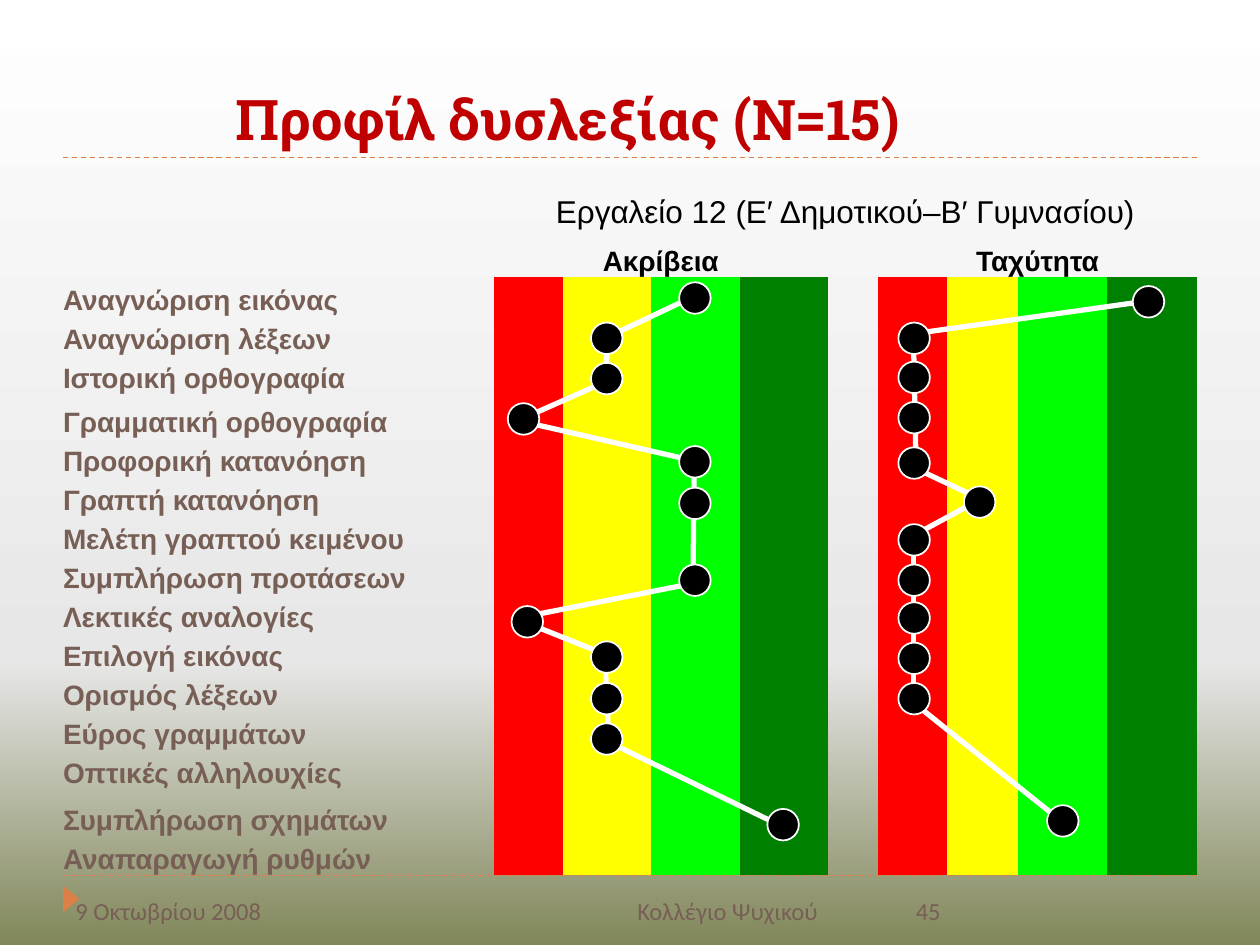
from copy import deepcopy
from dataclasses import dataclass

from lxml.etree import SubElement
from pptx import Presentation
from pptx.dml.color import RGBColor
from pptx.enum.dml import MSO_LINE
from pptx.enum.shapes import MSO_CONNECTOR, MSO_SHAPE
from pptx.enum.text import MSO_ANCHOR, PP_ALIGN
from pptx.oxml.ns import qn
from pptx.util import Inches, Pt


@dataclass(frozen=True)
class Theme:
    title: str = "C00000"
    label: str = "775F55"
    accent: str = "DD8047"
    black: str = "000000"
    white: str = "FFFFFF"
    bands: tuple = ("FF0000", "FFFF00", "00FF00", "008000")
    backdrop: tuple = ((0, "81875A"), (0.3, "E7E7E7"), (1, "FFFFFF"))
    title_size: int = 32
    tool_size: int = 18
    label_size: int = 16
    footer_size: int = 14
    title_font: str = "Roboto Slab"
    table_font: str = "Arial"
    footer_font: str = "Calibri"


@dataclass(frozen=True)
class Profile:
    heading: str
    first_column: int
    links: tuple  # (x1, y1, x2, y2)
    dots: tuple  # (left, top)


@dataclass(frozen=True)
class Caption:
    text: str
    box: tuple
    align: PP_ALIGN = PP_ALIGN.LEFT


THEME = Theme()
DOT = 0.25
COLUMNS = (3.42, 0.55, 0.7, 0.7, 0.7, 0.4, 0.55, 0.56, 0.71, 0.71)
HEADER_ROWS = (0.4, 0.31)
TESTS = (
    "Αναγνώριση εικόνας", "Αναγνώριση λέξεων", "Ιστορική ορθογραφία",
    "Γραμματική ορθογραφία", "Προφορική κατανόηση", "Γραπτή κατανόηση",
    "Μελέτη γραπτού κειμένου", "Συμπλήρωση προτάσεων", "Λεκτικές αναλογίες",
    "Επιλογή εικόνας", "Ορισμός λέξεων", "Εύρος γραμμάτων",
    "Οπτικές αλληλουχίες", "Συμπλήρωση σχημάτων", "Αναπαραγωγή ρυθμών",
)
TALL_ROWS = {"Γραμματική ορθογραφία": 0.35, "Συμπλήρωση σχημάτων": 0.37}
PROFILES = (
    Profile(
        "Ακρίβεια", 1,
        ((5.51, 3.67, 5.5, 4.6), (5.51, 2.35, 4.77, 2.7), (4.17, 4.94, 4.82, 5.2),
         (4.82, 2.68, 4.81, 2.98), (4.85, 3.01, 4.13, 3.33), (4.8, 5.2, 4.83, 5.84),
         (4.77, 5.86, 6.21, 6.56), (4.12, 3.34, 5.52, 3.66), (5.5, 4.63, 4.19, 4.89)),
        ((5.39, 2.24), (4.69, 2.56), (4.69, 2.88), (4.03, 3.2), (5.39, 3.54),
         (5.39, 3.87), (5.39, 4.48), (4.06, 4.81), (4.69, 5.09), (4.69, 5.42),
         (4.69, 5.74), (6.09, 6.42)),
    ),
    Profile(
        "Ταχύτητα", 6,
        ((9.1, 2.39, 7.24, 2.65), (7.28, 5.6, 8.44, 6.53), (7.25, 4.25, 7.25, 5.6),
         (7.25, 2.7, 7.27, 3.67), (7.23, 3.7, 7.8, 3.97), (7.73, 3.99, 7.27, 4.24)),
        ((8.99, 2.27), (7.13, 2.56), (7.13, 2.87), (7.13, 3.19), (7.13, 3.55),
         (7.65, 3.86), (7.13, 4.16), (7.13, 4.48), (7.13, 4.78), (7.13, 5.1),
         (7.13, 5.42), (8.31, 6.39)),
    ),
)
FOOTERS = (
    Caption("9 Οκτωβρίου 2008", (0.5, 7.06, 2.33, 0.29)),
    Caption("Κολλέγιο Ψυχικού", (3.42, 7.06, 3.17, 0.29), PP_ALIGN.RIGHT),
    Caption("45", (7.17, 7.06, 2.33, 0.29)),
)


def rgb(value: str) -> RGBColor:
    return RGBColor.from_string(value)


def write(paragraph, text: str, color: str, **formats) -> None:
    run = paragraph.add_run()
    run.text = text
    run.font.color.rgb = rgb(color)
    for name, value in formats.items():
        setattr(run.font, name, value)


def add_caption(slide, caption: Caption, color: str, anchor: MSO_ANCHOR, **formats) -> None:
    frame = slide.shapes.add_textbox(*map(Inches, caption.box)).text_frame
    frame.word_wrap = True
    frame.vertical_anchor = anchor
    frame.paragraphs[0].alignment = caption.align
    write(frame.paragraphs[0], caption.text, color, **formats)


def add_line(slide, ends: tuple, color: str, width: float, dash=None) -> None:
    line = slide.shapes.add_connector(MSO_CONNECTOR.STRAIGHT, *map(Inches, ends))
    line.line.color.rgb = rgb(color)
    line.line.width = Pt(width)
    if dash:
        line.line.dash_style = dash
    SubElement(line._element.spPr, qn("a:effectLst"))


def add_solid(slide, kind: MSO_SHAPE, box: tuple, fill: str):
    solid = slide.shapes.add_shape(kind, *map(Inches, box))
    solid.shadow.inherit = False
    solid.fill.solid()
    solid.fill.fore_color.rgb = rgb(fill)
    solid.line.fill.background()
    return solid


def paint_background(slide) -> None:
    fill = slide.background.fill
    fill.gradient()
    fill.gradient_angle = 90
    stops = slide.element.find(".//" + qn("a:gsLst"))
    stops.append(deepcopy(stops[-1]))
    for stop, (position, color) in zip(fill.gradient_stops, THEME.backdrop):
        stop.position = position
        stop.color.rgb = rgb(color)


def fill_cell(cell, text: str, color: str, size: int, bold: bool, align: PP_ALIGN) -> None:
    paragraph = cell.text_frame.paragraphs[0]
    paragraph.alignment = align
    properties = paragraph._p.get_or_add_pPr()
    properties.set("marL", str(Inches(0.38)))
    properties.set("indent", str(Inches(-0.38)))
    write(paragraph, text, color, size=Pt(size), bold=bold, name=THEME.table_font)


def add_test_table(slide) -> None:
    heights = HEADER_ROWS + tuple(TALL_ROWS.get(test, 0.31) for test in TESTS)
    table = slide.shapes.add_table(
        len(heights), len(COLUMNS), Inches(0.5), Inches(1.47),
        Inches(sum(COLUMNS)), Inches(sum(heights))).table
    table.first_row = table.horz_banding = False
    # Plain table style without grid
    table._tbl.tblPr.find(qn("a:tableStyleId")).text = "{2D5ABB26-0587-4C30-8999-92F81FD0307C}"
    for column, width in zip(table.columns, COLUMNS):
        column.width = Inches(width)
    for row, height in zip(table.rows, heights):
        row.height = Inches(height)

    cell_format = {"margin_left": 0, "margin_right": 0, "margin_top": 0,
                   "margin_bottom": 0, "vertical_anchor": MSO_ANCHOR.BOTTOM}
    for cell in table.iter_cells():
        for name, value in cell_format.items():
            setattr(cell, name, value)
        cell.fill.background()

    # Headings
    tool = table.cell(0, 1)
    tool.merge(table.cell(0, len(COLUMNS) - 1))
    tool.margin_top = tool.margin_bottom = Inches(0.06)
    fill_cell(tool, "Εργαλείο 12 (Ε′ Δημοτικού–Β′ Γυμνασίου)", THEME.black,
              THEME.tool_size, False, PP_ALIGN.CENTER)
    for profile in PROFILES:
        heading = table.cell(1, profile.first_column)
        heading.merge(table.cell(1, profile.first_column + len(THEME.bands) - 1))
        fill_cell(heading, profile.heading, THEME.black, THEME.label_size, True, PP_ALIGN.CENTER)

    # Tests and coloured bands
    for row, test in enumerate(TESTS, len(HEADER_ROWS)):
        fill_cell(table.cell(row, 0), test, THEME.label, THEME.label_size, True, PP_ALIGN.LEFT)
        for profile in PROFILES:
            for column, color in enumerate(THEME.bands, profile.first_column):
                band = table.cell(row, column)
                band.fill.solid()
                band.fill.fore_color.rgb = rgb(color)

    # Empty cells keep the label size so that rows do not grow
    for cell in table.iter_cells():
        if not cell.text_frame.text:
            end = SubElement(cell.text_frame.paragraphs[0]._p, qn("a:endParaRPr"))
            end.set("sz", str(THEME.label_size * 100))


def main() -> None:
    presentation = Presentation()
    presentation.slide_width, presentation.slide_height = Inches(10), Inches(7.5)
    slide = presentation.slides.add_slide(presentation.slide_layouts[6])

    # Backdrop and rules
    paint_background(slide)
    for y in (6.95, 1.25):
        add_line(slide, (0.5, y, 9.5, y), THEME.accent, 0.75, MSO_LINE.DASH)
    marker = add_solid(slide, MSO_SHAPE.ISOSCELES_TRIANGLE, (0.46, 7.07, 0.21, 0.13), THEME.accent)
    marker.rotation = 90

    # Title, table and footer
    add_caption(slide, Caption("Προφίλ δυσλεξίας (Ν=15)", (1.77, 0, 7.65, 1.25)), THEME.title,
                MSO_ANCHOR.BOTTOM, size=Pt(THEME.title_size), bold=True, name=THEME.title_font)
    add_test_table(slide)
    for footer in FOOTERS:
        add_caption(slide, footer, THEME.label, MSO_ANCHOR.TOP,
                    size=Pt(THEME.footer_size), name=THEME.footer_font)

    # Profile lines and dots
    for profile in PROFILES:
        for link in profile.links:
            add_line(slide, link, THEME.white, 3)
        for left, top in profile.dots:
            dot = add_solid(slide, MSO_SHAPE.OVAL, (left, top, DOT, DOT), THEME.black)
            dot.line.color.rgb = rgb(THEME.white)
            dot.line.width = Pt(1)

    presentation.save("out.pptx")


if __name__ == "__main__":
    main()
